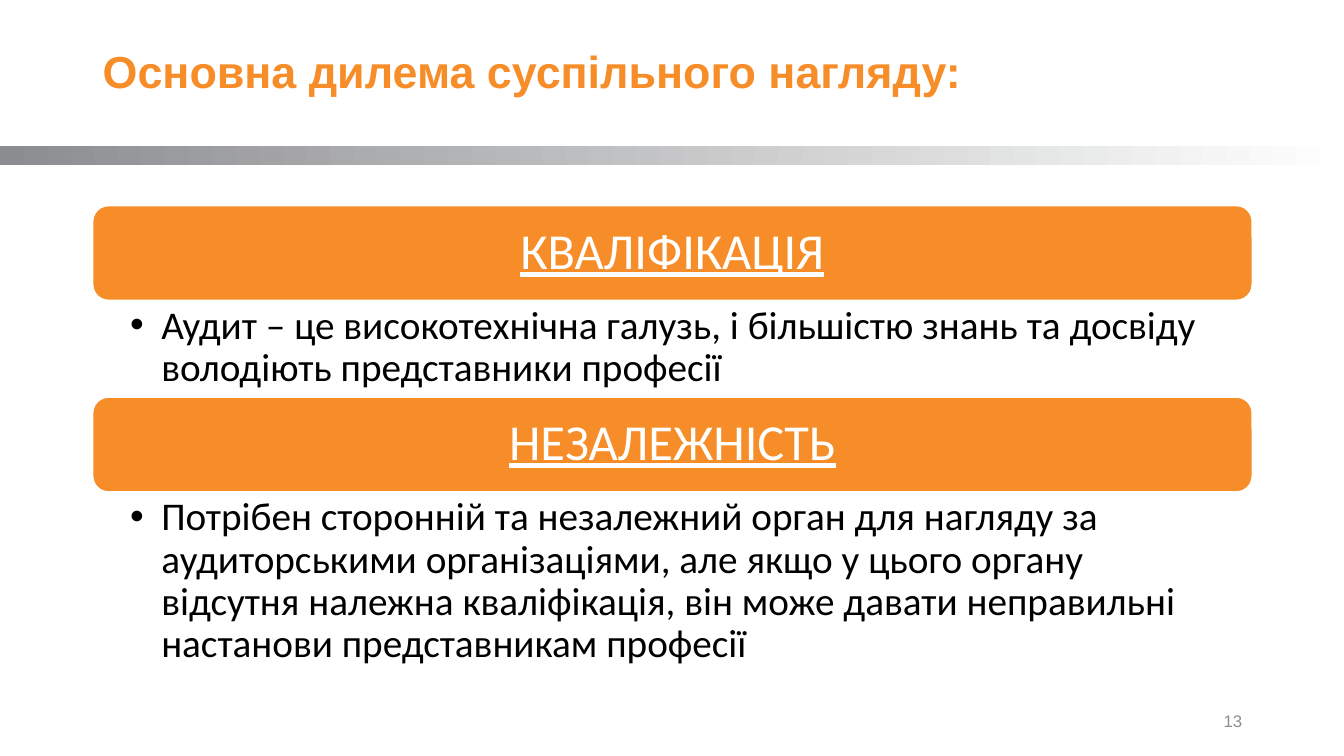
from dataclasses import dataclass

from lxml import etree
from pptx import Presentation
from pptx.dml.color import RGBColor
from pptx.enum import shapes, text
from pptx.oxml import ns
from pptx.util import Inches, Pt


@dataclass(frozen=True)
class Theme:
    orange: RGBColor = RGBColor.from_string("F78D28")
    gray: RGBColor = RGBColor.from_string("8C8D90")
    white: RGBColor = RGBColor.from_string("FFFFFF")
    black: RGBColor = RGBColor.from_string("000000")
    heading_font: str = "Arial"
    body_font: str = "Calibri"
    title_size: int = 32
    banner_size: int = 36
    body_size: int = 28
    number_size: int = 12


THEME = Theme()
SLIDE_WIDTH, SLIDE_HEIGHT = 13.33, 7.5
BANNER_HEIGHT = 0.94
SECTIONS = [
    ("КВАЛІФІКАЦІЯ", 0.96,
     "Аудит – це високотехнічна галузь, і більшістю знань та досвіду "
     "володіють представники професії"),
    ("НЕЗАЛЕЖНІСТЬ", 1.83,
     "Потрібен сторонній та незалежний орган для нагляду за аудиторськими "
     "організаціями, але якщо у цього органу відсутня належна кваліфікація, "
     "він може давати неправильні настанови представникам професії"),
]


def write_text(shape, content, *, font, size, color, bold=False, underline=False,
               align=text.PP_ALIGN.LEFT, anchor=text.MSO_ANCHOR.MIDDLE,
               insets=(0.1, 0.05, 0.1, 0.05), line_spacing=0.9, bullet_indent=None):
    frame = shape.text_frame
    frame.word_wrap = True
    frame.vertical_anchor = anchor
    (frame.margin_left, frame.margin_top,
     frame.margin_right, frame.margin_bottom) = map(Inches, insets)
    paragraph = frame.paragraphs[0]
    if bullet_indent:
        properties = paragraph._p.get_or_add_pPr()
        properties.set("marL", str(Inches(bullet_indent)))
        properties.set("indent", str(-Inches(bullet_indent)))
        bullet_font = etree.SubElement(properties, ns.qn("a:buFont"))
        bullet_font.set("typeface", "Arial")
        etree.SubElement(properties, ns.qn("a:buChar")).set("char", "•")
    paragraph.alignment = align
    paragraph.line_spacing = line_spacing
    run = paragraph.add_run()
    run.text = content
    run.font.name = font
    run.font.size = Pt(size)
    run.font.color.rgb = color
    run.font.bold = bold
    run.font.underline = underline


def add_text(slide, box, content, **style):
    write_text(slide.shapes.add_textbox(*map(Inches, box)), content, **style)


def add_gradient_bar(slide, box):
    bar = slide.shapes.add_shape(shapes.MSO_SHAPE.RECTANGLE, *map(Inches, box))
    bar.shadow.inherit = False
    bar.line.fill.background()
    bar.fill.gradient()
    bar.fill.gradient_angle = 0
    for stop, color in zip(bar.fill.gradient_stops, (THEME.gray, THEME.white)):
        stop.color.rgb = color


def add_section(slide, box, heading, body):
    left, top, width, height = box
    banner = slide.shapes.add_shape(
        shapes.MSO_SHAPE.ROUNDED_RECTANGLE,
        *map(Inches, (left, top, width, BANNER_HEIGHT)))
    banner.shadow.inherit = False
    banner.fill.solid()
    banner.fill.fore_color.rgb = THEME.orange
    banner.line.color.rgb = THEME.white
    banner.line.width = Pt(1)
    write_text(banner, heading, font=THEME.body_font, size=THEME.banner_size,
               color=THEME.white, underline=True, align=text.PP_ALIGN.CENTER,
               insets=(0.15, 0.15, 0.15, 0.15))
    add_text(slide, (left, top + BANNER_HEIGHT, width, height - BANNER_HEIGHT), body,
             font=THEME.body_font, size=THEME.body_size, color=THEME.black,
             anchor=text.MSO_ANCHOR.TOP, insets=(0.37, 0.05, 0.28, 0.05),
             bullet_indent=0.31)


def add_sections(slide, left, top, width):
    for heading, body_height, body in SECTIONS:
        height = BANNER_HEIGHT + body_height
        add_section(slide, (left, top, width, height), heading, body)
        top += height


def main():
    presentation = Presentation()
    presentation.slide_width = Inches(SLIDE_WIDTH)
    presentation.slide_height = Inches(SLIDE_HEIGHT)
    slide = presentation.slides.add_slide(presentation.slide_layouts[6])
    add_gradient_bar(slide, (0, 1.45, SLIDE_WIDTH, 0.19))
    add_text(slide, (9.42, 6.95, 3, 0.4), "13", font=THEME.heading_font,
             size=THEME.number_size, color=THEME.gray,
             align=text.PP_ALIGN.RIGHT, line_spacing=1.0)
    add_text(slide, (0.92, 0.26, 11.5, 0.95), "Основна дилема суспільного нагляду:",
             font=THEME.heading_font, size=THEME.title_size, color=THEME.orange,
             bold=True)
    add_sections(slide, 0.92, 2.04, 11.5)
    presentation.save("out.pptx")


if __name__ == "__main__":
    main()
